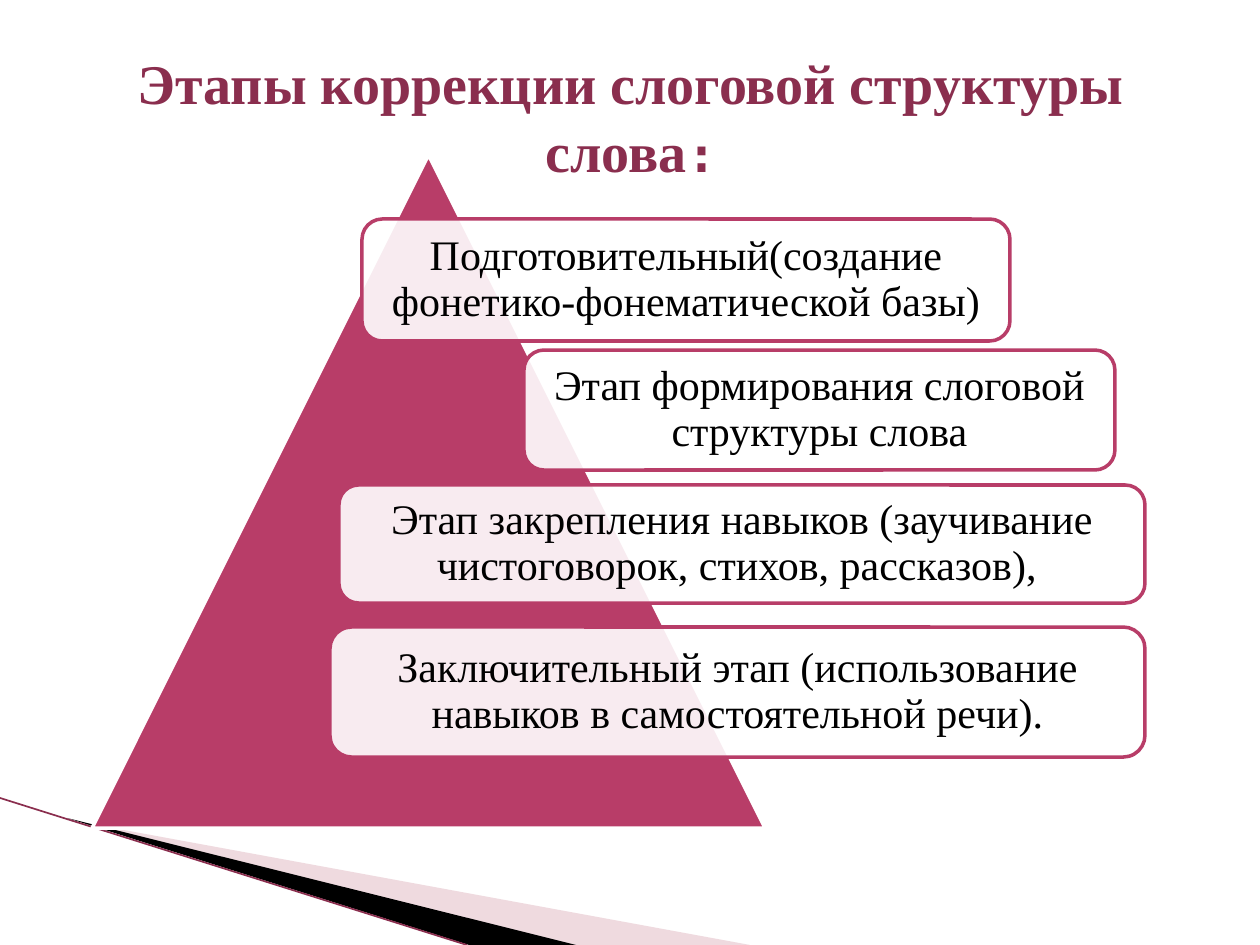
from dataclasses import dataclass

from lxml import etree
from pptx import Presentation
from pptx.dml.color import RGBColor
from pptx.enum.shapes import MSO_CONNECTOR, MSO_SHAPE
from pptx.enum.text import MSO_ANCHOR, PP_ALIGN
from pptx.oxml.ns import qn
from pptx.util import Pt

STRAIGHT = MSO_CONNECTOR.STRAIGHT
TRIANGLE = MSO_SHAPE.ISOSCELES_TRIANGLE
ROUNDED = MSO_SHAPE.ROUNDED_RECTANGLE
MIDDLE = MSO_ANCHOR.MIDDLE
CENTER = PP_ALIGN.CENTER

EMU_PER_PX = 914400 / 126
SLIDE_SIZE = (1260, 945)


@dataclass(frozen=True)
class Theme:
    accent: str = "B83D68"
    heading: str = "8A2E4E"
    wedge: str = "D8A3AF"
    dark: str = "000000"
    light: str = "FFFFFF"
    serif: str = "Times New Roman"
    mono: str = "DejaVu Sans Mono"
    heading_size: int = 32
    colon_size: int = 28
    stage_size: int = 24
    outline: int = 2
    hairline: float = 0.95


THEME = Theme()

TITLE = "Этапы коррекции слоговой структуры слова"
STAGES = [
    ("Подготовительный(создание фонетико-фонематической базы)", (270, 64, 648, 122)),
    ("Этап формирования слоговой структуры слова", (432, 195, 591, 120)),
    ("Этап закрепления навыков (заучивание чистоговорок, стихов, рассказов), ",
     (247, 330, 806, 118)),
    ("Заключительный этап (использование навыков в самостоятельной речи).",
     (238, 472, 815, 130)),
]


def px(length):
    return round(length * EMU_PER_PX)


def paint(shape, fill, opacity=100, line=None):
    shape.shadow.inherit = False
    shape.fill.solid()
    shape.fill.fore_color.rgb = RGBColor.from_string(fill)
    if opacity < 100:
        color = shape.fill._xPr.find(qn("a:solidFill"))[0]
        etree.SubElement(color, qn("a:alpha")).set("val", str(opacity * 1000))
    if line:
        shape.line.color.rgb = RGBColor.from_string(line)
        shape.line.width = Pt(THEME.outline)
    else:
        shape.line.fill.background()


def add_text(paragraph, text, *, size, color, font=THEME.serif, bold=False):
    run = paragraph.add_run()
    run.text = text
    run.font.size = Pt(size)
    run.font.name = font
    run.font.bold = bold
    run.font.color.rgb = RGBColor.from_string(color)


def centered_paragraph(shape, inset_x, inset_y):
    frame = shape.text_frame
    frame.word_wrap = True
    frame.vertical_anchor = MIDDLE
    frame.margin_left = frame.margin_right = px(inset_x)
    frame.margin_top = frame.margin_bottom = px(inset_y)
    paragraph = frame.paragraphs[0]
    paragraph.alignment = CENTER
    return paragraph


def draw_corner(slide, box):
    left, top, width, height = box
    wedges = [
        ([(69, 22), (750, height), (575, height)], THEME.wedge, 40),
        ([(67, 20), (576, height), (469, height)], THEME.dark, 100),
    ]
    for points, color, opacity in wedges:
        corners = [(left + x, top + y) for x, y in points]
        builder = slide.shapes.build_freeform(*corners[0], scale=EMU_PER_PX)
        builder.add_line_segments(corners[1:], close=True)
        paint(builder.convert_to_shape(), color, opacity)
    edge = slide.shapes.add_connector(
        STRAIGHT, px(left), px(top), px(left + 467), px(top + height))
    edge.line.color.rgb = RGBColor.from_string(THEME.heading)
    edge.line.width = Pt(THEME.hairline)
    etree.SubElement(edge._element.spPr, qn("a:effectLst"))


def draw_stage(slide, text, box):
    card = slide.shapes.add_shape(ROUNDED, *map(px, box))
    paint(card, THEME.light, 90, THEME.accent)
    paragraph = centered_paragraph(card, 18, 18)
    paragraph.line_spacing = 0.9
    add_text(paragraph, text, size=THEME.stage_size, color=THEME.dark)


def draw_pyramid(slide, box):
    left, top, _, _ = box
    pyramid = slide.shapes.add_shape(TRIANGLE, *map(px, box))
    paint(pyramid, THEME.accent, line=THEME.light)
    for text, (x, y, width, height) in STAGES:
        draw_stage(slide, text, (left + x, top + y, width, height))


def draw_title(slide, box):
    title = slide.shapes.add_textbox(*map(px, box))
    paragraph = centered_paragraph(title, 13, 6)
    add_text(paragraph, TITLE, size=THEME.heading_size, color=THEME.heading, bold=True)
    add_text(paragraph, ":", size=THEME.colon_size, color=THEME.heading,
             font=THEME.mono, bold=True)


def main():
    deck = Presentation()
    deck.slide_width, deck.slide_height = map(px, SLIDE_SIZE)
    slide = deck.slides.add_slide(deck.slide_layouts[6])
    draw_corner(slide, (0, 798, 750, 147))
    draw_pyramid(slide, (92, 155, 673, 673))
    draw_title(slide, (64, 37, 1134, 158))
    deck.save("out.pptx")


if __name__ == "__main__":
    main()
